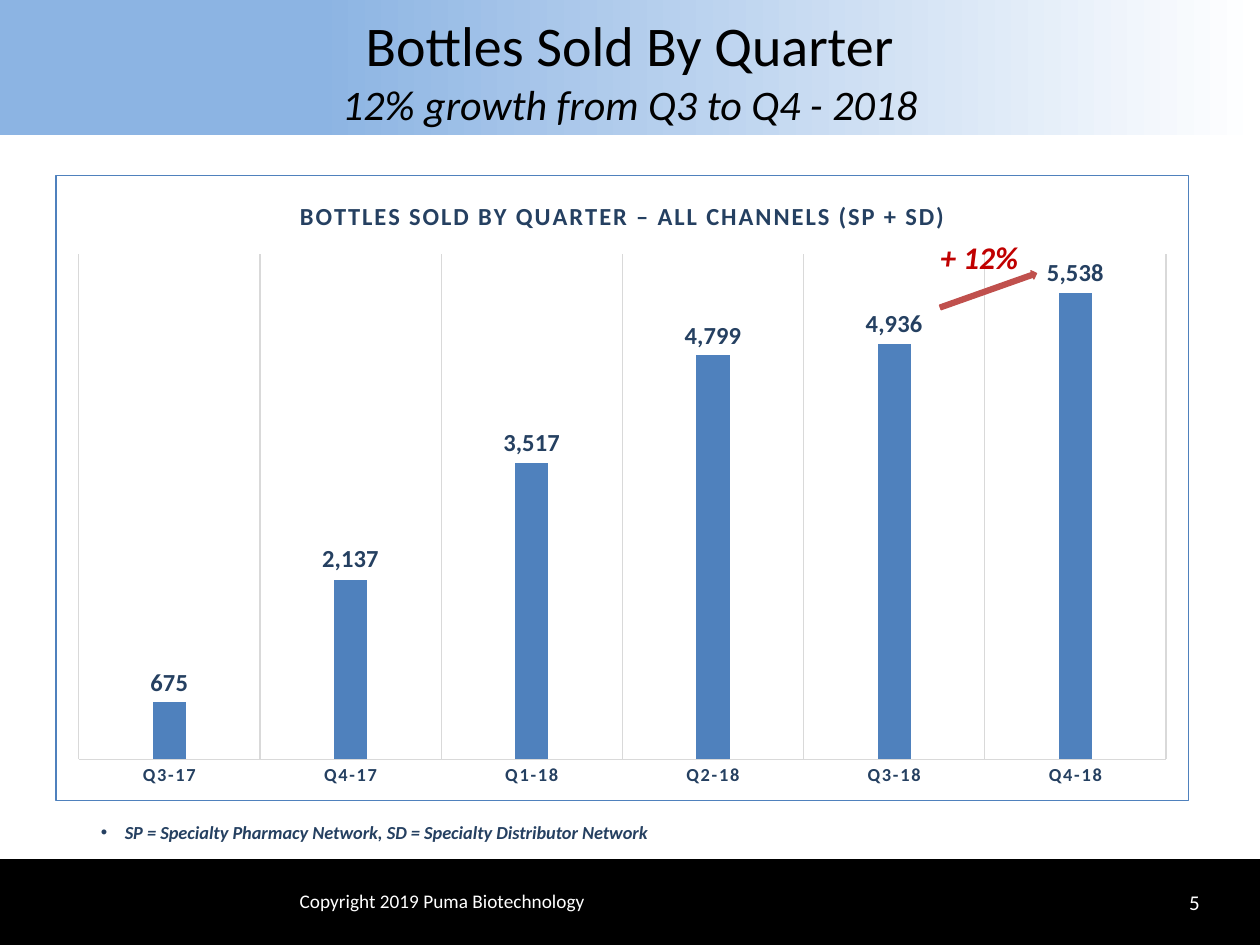
from dataclasses import dataclass

from lxml.etree import SubElement
from pptx import Presentation
from pptx.chart.data import CategoryChartData
from pptx.dml.color import RGBColor as Rgb
from pptx.enum.chart import XL_CHART_TYPE as ChartType
from pptx.enum.chart import XL_LABEL_POSITION as LabelPosition
from pptx.enum.chart import XL_TICK_MARK as TickMark
from pptx.enum.shapes import MSO_SHAPE as Preset
from pptx.enum.text import MSO_ANCHOR as Anchor
from pptx.enum.text import MSO_AUTO_SIZE as AutoSize
from pptx.enum.text import PP_ALIGN as Align
from pptx.oxml import parse_xml
from pptx.oxml.ns import nsdecls, qn
from pptx.util import Inches, Pt


@dataclass(frozen=True)
class Theme:
    font: str = "Calibri"
    black: str = "000000"
    white: str = "FFFFFF"
    navy: str = "254061"
    blue: str = "4F81BD"
    sky: str = "8CB4E3"
    grid: str = "D9D9D9"
    arrow: str = "C0504D"
    growth: str = "C00000"
    title_size: float = 32
    subtitle_size: float = 24
    growth_size: float = 18
    label_size: float = 14
    page_size: float = 12
    footer_size: float = 11
    small_size: float = 10.5
    hairline: float = 0.75


@dataclass(frozen=True)
class Area:
    left: float
    top: float
    width: float
    height: float

    def lengths(self) -> tuple:
        return tuple(Inches(n) for n in (self.left, self.top, self.width, self.height))


@dataclass(frozen=True)
class Label:
    text: str
    area: Area
    size: float
    color: str
    align: Align = Align.LEFT
    emphasis: bool = False
    wrap: bool = True
    anchor: Anchor = Anchor.TOP


THEME = Theme()
LABELS = [
    Label("5", Area(8.92, 6.96, 0.7, 0.4), THEME.page_size, THEME.white,
          Align.RIGHT, anchor=Anchor.MIDDLE),
    Label("+ 12% ", Area(7.36, 1.84, 0.88, 0.4), THEME.growth_size, THEME.growth,
          Align.CENTER, emphasis=True, wrap=False),
    Label("Copyright 2019 Puma Biotechnology", Area(2.28, 7.01, 2.55, 0.29),
          THEME.footer_size, THEME.white),
]
BOTTLES = {"Q3-17": 675, "Q4-17": 2137, "Q1-18": 3517,
           "Q2-18": 4799, "Q3-18": 4936, "Q4-18": 5538}


def style_font(font, size: float, color: str, bold: bool = False, italic: bool = False) -> None:
    font.name, font.size = THEME.font, Pt(size)
    font.bold, font.italic = bold, italic
    font.color.rgb = Rgb.from_string(color)


def add_run(para, text: str, size: float, color: str, **style) -> None:
    span = para.add_run()
    span.text = text
    style_font(span.font, size, color, **style)


def place(shape, area: Area) -> None:
    shape.left, shape.top, shape.width, shape.height = area.lengths()


def add_block(page, preset: Preset, area: Area, color: str):
    block = page.shapes.add_shape(preset, *area.lengths())
    block.shadow.inherit = False
    block.fill.solid()
    block.fill.fore_color.rgb = Rgb.from_string(color)
    block.line.color.rgb = Rgb.from_string(color)
    block.line.width = Pt(THEME.hairline)
    return block


def add_label(page, label: Label) -> None:
    frame = page.shapes.add_textbox(*label.area.lengths()).text_frame
    frame.word_wrap = label.wrap
    frame.vertical_anchor = label.anchor
    para = frame.paragraphs[0]
    para.alignment = label.align
    add_run(para, label.text, label.size, label.color,
            bold=label.emphasis, italic=label.emphasis)


def fill_title(title) -> None:
    place(title, Area(0, 0, 10, 1.07))
    title.fill.gradient()
    title.fill.gradient_angle = 0
    stops = ((0.25, THEME.sky), (1, THEME.white))
    for stop, (position, color) in zip(title.fill.gradient_stops, stops):
        stop.position, stop.color.rgb = position, Rgb.from_string(color)
    frame = title.text_frame
    frame.auto_size = AutoSize.NONE
    frame.vertical_anchor = Anchor.BOTTOM
    frame.margin_left = frame.margin_right = Inches(0.5)
    para = frame.paragraphs[0]
    para.alignment = Align.CENTER
    add_run(para, "Bottles Sold By Quarter", THEME.title_size, THEME.black)
    para.add_line_break()
    add_run(para, "12% growth from Q3 to Q4 - 2018", THEME.subtitle_size,
            THEME.black, italic=True)


def fill_footnote(body) -> None:
    place(body, Area(0.7, 6.47, 8.31, 0.28))
    body.text_frame.auto_size = AutoSize.NONE
    para = body.text_frame.paragraphs[0]
    para.space_before = Pt(0)
    properties = para._p.get_or_add_pPr()
    properties.set("marL", str(Inches(0.19)))
    properties.set("indent", str(Inches(-0.19)))
    SubElement(properties, qn("a:buFont")).set("typeface", "Arial")
    SubElement(properties, qn("a:buChar")).set("char", "•")
    add_run(para, "SP = Specialty Pharmacy Network, SD = Specialty Distributor Network",
            THEME.small_size, THEME.navy, bold=True, italic=True)


def frame_chart(chart) -> None:
    """Give the chart its background, border and fixed plot area."""
    chart._chartSpace.find(qn("c:chart")).addnext(parse_xml(
        f'<c:spPr {nsdecls("c", "a")}>'
        f'<a:solidFill><a:srgbClr val="{THEME.white}"/></a:solidFill>'
        f'<a:ln w="{Pt(THEME.hairline)}"><a:solidFill><a:srgbClr val="{THEME.blue}"/>'
        '</a:solidFill></a:ln></c:spPr>'))
    plot_area = chart._chartSpace.find(".//" + qn("c:plotArea"))
    for old in plot_area.findall(qn("c:layout")):
        plot_area.remove(old)
    bounds = {"x": 0.02, "y": 0.126, "w": 0.96, "h": 0.808}
    parts = "".join(f'<c:{name} val="{value}"/>' for name, value in bounds.items())
    plot_area.insert(0, parse_xml(
        f'<c:layout {nsdecls("c")}><c:manualLayout><c:layoutTarget val="inner"/>'
        f'<c:xMode val="edge"/><c:yMode val="edge"/>{parts}</c:manualLayout></c:layout>'))


def add_bottle_chart(page) -> None:
    data = CategoryChartData(number_format="#,##0")
    data.categories = list(BOTTLES)
    data.add_series("Series 1", list(BOTTLES.values()))
    chart = page.shapes.add_chart(
        ChartType.COLUMN_CLUSTERED, *Area(0.44, 1.39, 9, 4.97).lengths(), data).chart
    frame_chart(chart)
    style_font(chart.font, 10, THEME.navy)
    chart.has_legend = False
    chart.has_title = True
    heading = chart.chart_title.text_frame.paragraphs[0]
    add_run(heading, "BOTTLES SOLD BY QUARTER – ALL CHANNELS (SP + SD)",
            THEME.label_size, THEME.navy, bold=True)
    heading.runs[0]._r.get_or_add_rPr().set("spc", "100")

    # Axes
    quarters, amounts = chart.category_axis, chart.value_axis
    quarters.major_tick_mark = quarters.minor_tick_mark = TickMark.NONE
    quarters.has_major_gridlines = True
    for line in (quarters.format.line, quarters.major_gridlines.format.line):
        line.color.rgb = Rgb.from_string(THEME.grid)
        line.width = Pt(THEME.hairline)
    style_font(quarters.tick_labels.font, THEME.small_size, THEME.navy, bold=True)
    quarters._element.find(".//" + qn("a:defRPr")).set("spc", "100")
    amounts.minimum_scale, amounts.maximum_scale = 0, 6000
    amounts.has_major_gridlines = False
    amounts.visible = False

    # Columns and their values
    plot = chart.plots[0]
    plot.gap_width, plot.overlap = 444, -90
    plot.vary_by_categories = False
    series = plot.series[0]
    series.format.fill.solid()
    series.format.fill.fore_color.rgb = Rgb.from_string(THEME.blue)
    labels = series.data_labels
    labels.show_value = True
    labels.position = LabelPosition.OUTSIDE_END
    labels.number_format, labels.number_format_is_linked = "#,##0", False
    style_font(labels.font, THEME.label_size, THEME.navy, bold=True)


def main() -> None:
    deck = Presentation()
    deck.slide_width, deck.slide_height = Inches(10), Inches(7.5)
    page = deck.slides.add_slide(deck.slide_layouts[1])
    fill_title(page.shapes.title)
    fill_footnote(page.placeholders[1])
    add_block(page, Preset.RECTANGLE, Area(0, 6.82, 10, 0.68), THEME.black)
    add_bottle_chart(page)
    # Growth arrow between the last two columns
    arrow = add_block(page, Preset.UP_ARROW, Area(7.81, 1.9, 0.07, 0.81), THEME.arrow)
    arrow.rotation = 70.5
    arrow.adjustments[0], arrow.adjustments[1] = 0.56, 0.5
    for label in LABELS:
        add_label(page, label)
    deck.save("out.pptx")


if __name__ == "__main__":
    main()
